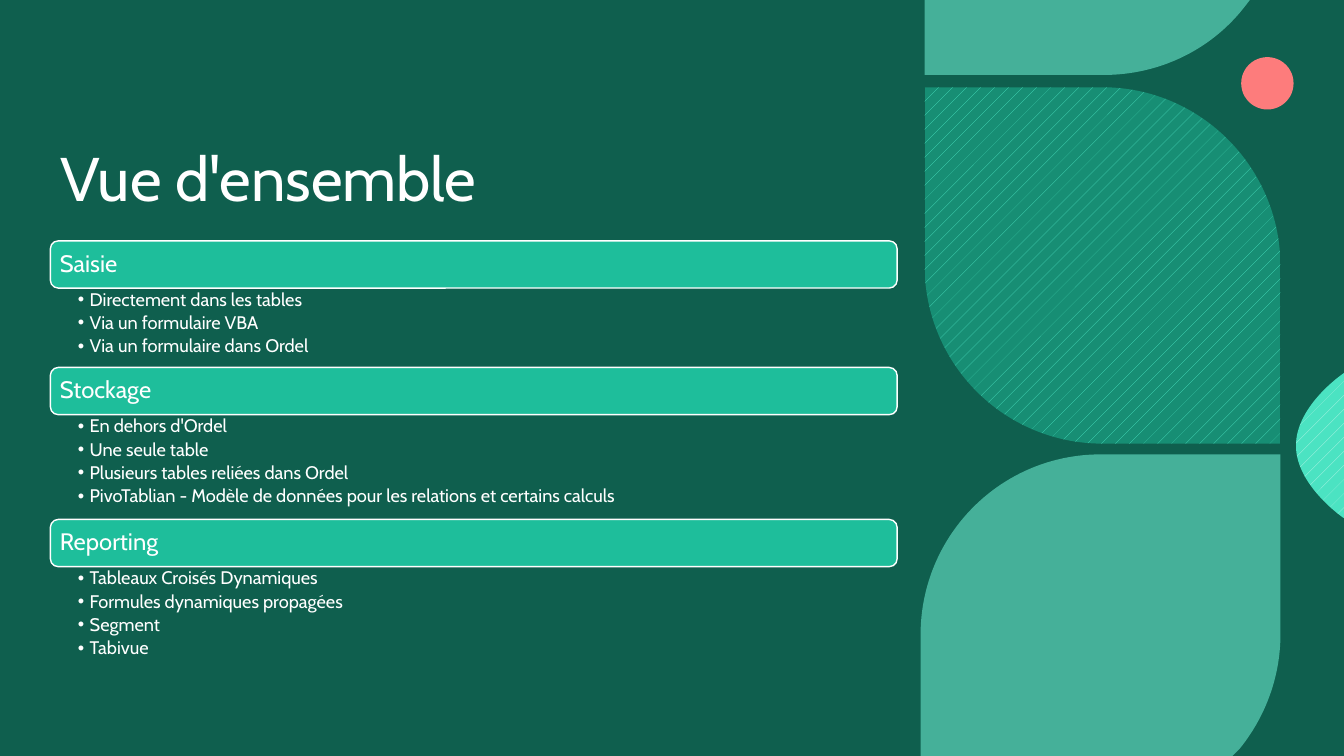
from dataclasses import dataclass
from typing import Optional

from lxml.etree import Element, SubElement
from pptx import Presentation
from pptx.dml.color import RGBColor
from pptx.dml.fill import FillFormat
from pptx.enum.dml import MSO_PATTERN
from pptx.enum.shapes import MSO_SHAPE
from pptx.enum.text import MSO_ANCHOR, MSO_AUTO_SIZE, PP_ALIGN
from pptx.oxml.ns import qn
from pptx.shapes.autoshape import Shape
from pptx.slide import Slide
from pptx.text.text import TextFrame, _Paragraph
from pptx.util import Cm, Pt

COLOURS = {
    "night": "09392F", "veil": "18997E", "band": "1EBE9B", "white": "FFFFFF",
    "coral": "FD7C7C", "mint": "69E7CC", "bright": "4BE3C2",
    "pale": "C3F6EB", "leaf": "178E74",
}
FONT = "Cabin"
WIDTH, HEIGHT = 33.87, 19.05
LEFT, COLUMN = 1.27, 21.34
FIRST_BAND, BAND_HEIGHT = 6.07, 1.19


@dataclass(frozen=True)
class Section:
    heading: str
    items: list[str]
    placeholder: int
    list_height: float


@dataclass(frozen=True)
class Petal:
    """Outline in cm: pairs are corners, sextuples are Bézier curves."""
    outline: list[tuple[float, ...]]
    colour: str
    alpha: int = 100
    hatch: Optional[str] = None


SECTIONS = [
    Section("Saisie", ["Directement dans les tables", "Via un formulaire VBA",
                       "Via un formulaire dans Ordel"], 1, 2.0),
    Section("Stockage", ["En dehors d'Ordel", "Une seule table",
                         "Plusieurs tables reliées dans Ordel",
                         "PivoTablian - Modèle de données pour les relations et certains calculs"],
            2, 2.64),
    Section("Reporting", ["Tableaux Croisés Dynamiques", "Formules dynamiques propagées",
                          "Segment", "Tabivue"], 3, 2.64),
]

PETALS = [
    Petal([(23.3, 0), (31.5, 0), (31.32, 0.23),
           (30.51, 1.24, 29.24, 1.89, 27.81, 1.89), (23.3, 1.89)], "mint", 60),
    Petal([(27.74, 11.45), (32.27, 11.45), (32.27, 15.98),
           (32.27, 17.07, 31.88, 18.08, 31.24, 18.87), (31.06, HEIGHT), (23.2, HEIGHT),
           (23.2, 16), (23.2, 13.49, 25.22, 11.45, 27.74, 11.45)], "mint", 60),
    Petal([(WIDTH, 9.4), (WIDTH, 13.06), (WIDTH, 13.06, 32.66, 12.24, 32.66, 11.23),
           (32.66, 10.21, WIDTH, 9.4, WIDTH, 9.4)], "bright", hatch="pale"),
    Petal([(32.27, 11.18), (27.79, 11.18), (25.3, 11.18, 23.3, 9.17, 23.3, 6.68),
           (23.3, 2.2), (27.79, 2.2), (30.25, 2.2, 32.27, 4.22, 32.27, 6.71)],
          "leaf", hatch="bright"),
]


def rgb(name: str) -> RGBColor:
    return RGBColor.from_string(COLOURS[name])


def paint(fill: FillFormat, colour: str) -> None:
    fill.solid()
    fill.fore_color.rgb = rgb(colour)


def set_alpha(shape: Shape, percent: int) -> None:
    tint = shape._element.spPr.find(qn("a:solidFill")).find(qn("a:srgbClr"))
    SubElement(tint, qn("a:alpha"), val=str(percent * 1000))


def add_block(slide: Slide, kind: MSO_SHAPE, left: float, top: float,
              width: float, height: float, colour: str) -> Shape:
    block = slide.shapes.add_shape(kind, Cm(left), Cm(top), Cm(width), Cm(height))
    block.shadow.inherit = False
    paint(block.fill, colour)
    block.line.fill.background()
    return block


def bend(leaf: Shape, outline: list[tuple[float, ...]]) -> None:
    """Turn the straight segments into curves where the outline has control points."""
    segments = list(leaf._element.iter(qn("a:lnTo")))
    for segment, part in zip(segments, outline[1:]):
        if len(part) == 2:
            continue
        curve = Element(qn("a:cubicBezTo"))
        for x, y in zip(part[::2], part[1::2]):
            SubElement(curve, qn("a:pt"), x=str(Cm(x) - leaf.left), y=str(Cm(y) - leaf.top))
        segment.getparent().replace(segment, curve)


def add_petal(slide: Slide, petal: Petal) -> None:
    start, *others = [(Cm(part[-2]), Cm(part[-1])) for part in petal.outline]
    builder = slide.shapes.build_freeform(*start)
    builder.add_line_segments(others, close=False)
    leaf = builder.convert_to_shape()
    bend(leaf, petal.outline)
    SubElement(next(leaf._element.iter(qn("a:path"))), qn("a:close"))
    leaf.shadow.inherit = False
    leaf.line.fill.background()
    if petal.hatch:
        leaf.fill.patterned()
        leaf.fill.pattern = MSO_PATTERN.PERCENT_5
        leaf.fill.fore_color.rgb = rgb(petal.hatch)
        leaf.fill.back_color.rgb = rgb(petal.colour)
    else:
        paint(leaf.fill, petal.colour)
        set_alpha(leaf, petal.alpha)


def set_frame(frame: TextFrame, anchor: MSO_ANCHOR, left: float, top: float,
              right: float) -> None:
    frame.word_wrap = True
    frame.auto_size = MSO_AUTO_SIZE.NONE
    frame.vertical_anchor = anchor
    frame.margin_left, frame.margin_right = Cm(left), Cm(right)
    frame.margin_top = frame.margin_bottom = Cm(top)


def format_text(paragraph: _Paragraph, size: float) -> None:
    paragraph.alignment = PP_ALIGN.LEFT
    paragraph.line_spacing = 0.9
    paragraph.space_before = Pt(0)
    paragraph.font.name = FONT
    paragraph.font.size = Pt(size)
    paragraph.font.bold = False
    paragraph.font.color.rgb = rgb("white")


def add_section(slide: Slide, section: Section, top: float) -> None:
    # Heading band
    band = add_block(slide, MSO_SHAPE.ROUNDED_RECTANGLE, LEFT, top, COLUMN, BAND_HEIGHT, "band")
    paint(band.line.fill, "white")
    band.line.width = Pt(1)
    set_frame(band.text_frame, MSO_ANCHOR.MIDDLE, 0.18, 0.18, 0.18)
    band.text_frame.text = section.heading
    format_text(band.text_frame.paragraphs[0], 17)

    # Bulleted list
    details = slide.placeholders[section.placeholder]
    details.left, details.top = Cm(LEFT), Cm(top + BAND_HEIGHT)
    details.width, details.height = Cm(COLUMN), Cm(section.list_height)
    set_frame(details.text_frame, MSO_ANCHOR.TOP, 0.69, 0.06, 0.34)
    details.text_frame.text = "\n".join(section.items)
    for item in details.text_frame.paragraphs:
        item.level = 1
        properties = item._p.get_or_add_pPr()
        properties.set("marL", str(Cm(0.3)))
        properties.set("indent", str(-Cm(0.3)))
        SubElement(properties, qn("a:buChar"), char="•")
        format_text(item, 13)
        item.space_after = Pt(2.6)


def main() -> None:
    deck = Presentation()
    deck.slide_width, deck.slide_height = Cm(WIDTH), Cm(HEIGHT)
    slide = deck.slides.add_slide(deck.slide_layouts[4])
    unused = slide.placeholders[4]._element
    unused.getparent().remove(unused)

    # Background with a translucent veil behind everything
    paint(slide.background.fill, "night")
    veil = add_block(slide, MSO_SHAPE.RECTANGLE, 0, 0, WIDTH, HEIGHT, "veil")
    set_alpha(veil, 40)
    slide.shapes._spTree.insert(2, veil._element)

    # Decoration on the right
    add_block(slide, MSO_SHAPE.OVAL, 31.28, 1.44, 1.32, 1.32, "coral")
    for petal in PETALS:
        add_petal(slide, petal)

    # Title
    title = slide.shapes.title
    title.left, title.top, title.width, title.height = Cm(LEFT), Cm(1.87), Cm(COLUMN), Cm(3.68)
    set_frame(title.text_frame, MSO_ANCHOR.BOTTOM, 0.25, 0.13, 0.25)
    title.text_frame.text = "Vue d'ensemble"
    format_text(title.text_frame.paragraphs[0], 44)

    # Sections stacked without gaps
    top = FIRST_BAND
    for section in SECTIONS:
        add_section(slide, section, top)
        top += BAND_HEIGHT + section.list_height

    deck.save("out.pptx")


if __name__ == "__main__":
    main()
